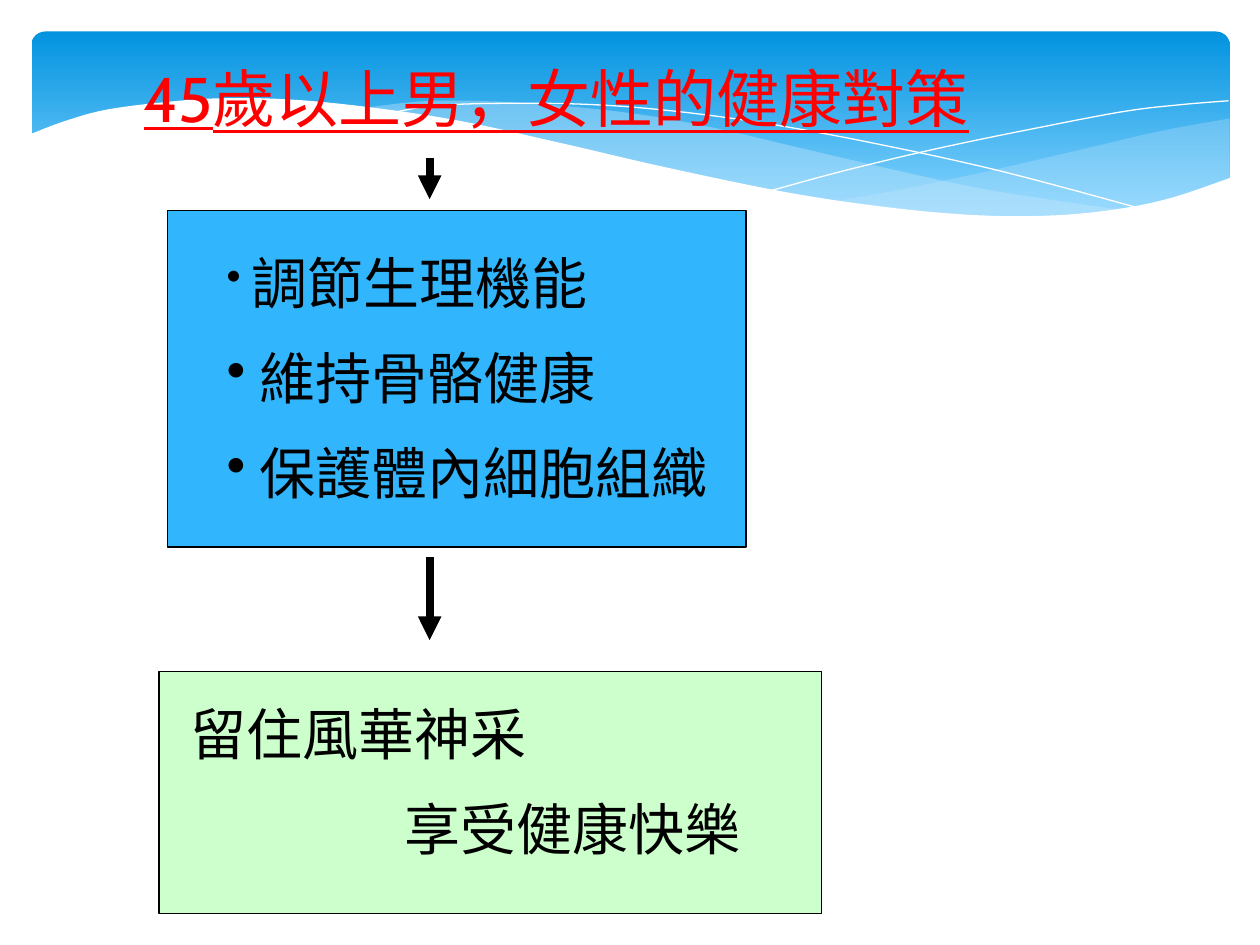
from lxml import etree
from pptx import Presentation
from pptx.dml.color import RGBColor
from pptx.enum.dml import MSO_THEME_COLOR
from pptx.enum.shapes import MSO_CONNECTOR, MSO_SHAPE
from pptx.enum.text import MSO_ANCHOR, MSO_AUTO_SIZE, PP_ALIGN
from pptx.oxml.ns import qn
from pptx.util import Inches, Pt

RECTANGLE = MSO_SHAPE.RECTANGLE
ROUNDED = MSO_SHAPE.ROUNDED_RECTANGLE
STRAIGHT = MSO_CONNECTOR.STRAIGHT
TOP = MSO_ANCHOR.TOP
GROW = MSO_AUTO_SIZE.SHAPE_TO_FIT_TEXT
LEFT = PP_ALIGN.LEFT

FONT = "Cabin"
BLACK = RGBColor(0x00, 0x00, 0x00)
WHITE = RGBColor(0xFF, 0xFF, 0xFF)
RED = RGBColor(0xFF, 0x00, 0x00)
BLUE = RGBColor(0x31, 0xB6, 0xFD)
GREEN = RGBColor(0xCC, 0xFF, 0xCC)
BAND_TOP = RGBColor(0x02, 0x93, 0xE0)
BAND_BOTTOM = RGBColor(0x83, 0xD3, 0xFE)
VEIL = RGBColor(0xC6, 0xE7, 0xFC)

RIGHT_VEIL = [
    [(9.51, 0.69), (8.96, 0.79), (8.36, 0.93), (7.54, 1.12), (6.81, 1.27), (6.36, 1.35)],
    [(6.36, 1.35), (6.94, 1.42), (7.56, 1.47), (8.1, 1.47), (8.64, 1.41), (9.1, 1.31),
     (9.51, 1.16)],
]
MIDDLE_VEIL = [
    [(8.68, 1.42), (8.12, 1.34), (7.5, 1.24), (6.81, 1.09), (6.04, 0.91), (5.44, 0.77),
     (4.77, 0.65), (3.95, 0.57), (3.19, 0.55), (2.61, 0.61)],
    [(2.61, 0.61), (3.37, 0.72), (4.24, 0.91), (5.05, 1.1), (5.76, 1.25), (6.4, 1.36),
     (6.97, 1.43), (7.48, 1.47), (7.93, 1.48), (8.32, 1.46), (8.68, 1.42)],
]
FALLING_LINE = [[(2.84, 0.65), (3.19, 0.59), (3.76, 0.57), (4.44, 0.58), (5.08, 0.63),
                 (5.83, 0.73), (6.7, 0.89), (7.7, 1.11), (8.82, 1.41)]]
RISING_LINE = [[(5.88, 1.26), (6.47, 1.1), (7.23, 0.92), (8.11, 0.74), (8.7, 0.63),
                (9.13, 0.58), (9.5, 0.55)]]
PAGE_EDGE = [
    [(9.52, 1.16), (9.05, 1.32), (8.62, 1.41), (8.12, 1.46), (7.53, 1.46), (6.83, 1.4),
     (6.01, 1.28), (5.04, 1.08), (4.22, 0.89), (3.4, 0.71), (2.67, 0.6), (2.05, 0.54),
     (1.52, 0.53), (1.07, 0.56), (0.6, 0.62), (0.27, 0.71), (-0.02, 0.82)],
    [(-0.02, 1.99), (9.52, 1.99)],
]


def smooth(knots, steps=6):
    padded = [knots[0], *knots, knots[-1]]
    curve = []
    for a, b, c, d in zip(padded, padded[1:], padded[2:], padded[3:]):
        for step in range(steps):
            t = step / steps
            curve.append(tuple(
                q + t * (r - p) / 2 + t ** 2 * (2 * p - 5 * q + 4 * r - s) / 2
                + t ** 3 * (3 * q - p - 3 * r + s) / 2
                for p, q, r, s in zip(a, b, c, d)))
    return curve + [knots[-1]]


def add_outline(slide, left, top, curves, closed):
    points = [(left + Inches(x), top + Inches(y))
              for knots in curves for x, y in smooth(knots)]
    builder = slide.shapes.build_freeform(*points[0], scale=1.0)
    builder.add_line_segments(points[1:], close=closed)
    outline = builder.convert_to_shape()
    outline.shadow.inherit = False
    return outline


def add_area(slide, left, top, curves, color, opacity=100):
    area = add_outline(slide, left, top, curves, True)
    area.line.fill.background()
    area.fill.solid()
    area.fill.fore_color.rgb = color
    if opacity < 100:
        tint = area.fill._xPr.find(".//" + qn("a:srgbClr"))
        etree.SubElement(tint, qn("a:alpha"), val=str(opacity * 1000))


def add_wave_band(slide, left, top, width, height):
    band = slide.shapes.add_shape(ROUNDED, left, top, width, height)
    band.adjustments[0] = 0.07
    band.shadow.inherit = False
    band.line.fill.background()
    band.fill.gradient()
    band.fill.gradient_angle = 270
    stops = zip(band.fill.gradient_stops, (BAND_TOP, BAND_BOTTOM), (0, 0.9))
    for stop, color, position in stops:
        stop.color.theme_color = MSO_THEME_COLOR.ACCENT_1
        stop.color.rgb = color
        stop.position = position
    add_area(slide, left, top, RIGHT_VEIL, VEIL, 29)
    add_area(slide, left, top, MIDDLE_VEIL, VEIL, 40)
    for curves in (FALLING_LINE, RISING_LINE):
        crest = add_outline(slide, left, top, curves, False)
        crest.fill.background()
        crest.line.color.rgb = WHITE
        crest.line.width = Pt(0)
    add_area(slide, left, top, PAGE_EDGE, WHITE)


def place_title(slide, left, top, width, height):
    title = slide.shapes.title
    title.left, title.top, title.width, title.height = left, top, width, height
    slide.shapes._spTree.append(title._element)
    frame = title.text_frame
    frame.text = "45歲以上男，女性的健康對策"
    frame.word_wrap = True
    frame.auto_size = GROW
    frame.vertical_anchor = TOP
    heading = frame.paragraphs[0]
    heading.alignment = LEFT
    heading.font.name = FONT
    heading.font.size = Pt(36)
    heading.font.underline = True
    heading.font.color.rgb = RED


def add_panel(slide, left, top, width, height, color):
    panel = slide.shapes.add_shape(RECTANGLE, left, top, width, height)
    panel.shadow.inherit = False
    panel.fill.solid()
    panel.fill.fore_color.rgb = color
    panel.line.color.rgb = BLACK
    panel.line.width = Pt(1)


def add_lines(slide, left, top, width, height, lines):
    frame = slide.shapes.add_textbox(left, top, width, height).text_frame
    frame.word_wrap = True
    frame.auto_size = GROW
    for index, (text, margin, bullet_percent) in enumerate(lines):
        line = frame.add_paragraph() if index else frame.paragraphs[0]
        line.text = text
        line.font.name = FONT
        line.font.size = Pt(32)
        line.font.color.rgb = BLACK
        if index:
            line.space_before = Pt(16)
        properties = line._p.get_or_add_pPr()
        properties.set("marL", str(Inches(margin)))
        if bullet_percent:
            properties.set("indent", str(-Inches(margin)))
            size = etree.Element(qn("a:buSzPct"), val=str(bullet_percent * 1000))
            bullet = etree.Element(qn("a:buChar"), char="•")
            position = 1 if index else 0
            properties.insert(position, size)
            properties.insert(position + 1, bullet)


def add_down_arrow(slide, x, top, bottom):
    arrow = slide.shapes.add_connector(STRAIGHT, x, top, x, bottom)
    arrow.line.color.rgb = BLACK
    arrow.line.width = Pt(4.5)
    etree.SubElement(arrow.line._get_or_add_ln(), qn("a:tailEnd"), type="triangle")
    etree.SubElement(arrow._element.spPr, qn("a:effectLst"))


def main():
    deck = Presentation()
    deck.slide_width, deck.slide_height = Inches(10), Inches(7.5)
    slide = deck.slides.add_slide(deck.slide_layouts[5])
    add_wave_band(slide, Inches(0.25), Inches(0.25), Inches(9.51), Inches(1.56))
    place_title(slide, Inches(1.04), Inches(0.42), Inches(6.78), Inches(0.71))
    add_panel(slide, Inches(1.33), Inches(1.67), Inches(4.59), Inches(2.67), BLUE)
    add_lines(slide, Inches(1.7), Inches(1.92), Inches(5.26), Inches(2.23),
              [("調節生理機能", 0.2, 75), ("維持骨骼健康", 0.26, 100),
               ("保護體內細胞組織", 0.26, 100)])
    add_panel(slide, Inches(1.26), Inches(5.33), Inches(5.26), Inches(1.92), GREEN)
    for top, bottom in ((1.25, 1.58), (4.42, 5.08)):
        add_down_arrow(slide, Inches(3.41), Inches(top), Inches(bottom))
    add_lines(slide, Inches(1.41), Inches(5.5), Inches(4.89), Inches(1.43),
              [("留住風華神采", 0, None), ("享受健康快樂", 1.7, None)])
    deck.save("out.pptx")


if __name__ == "__main__":
    main()
